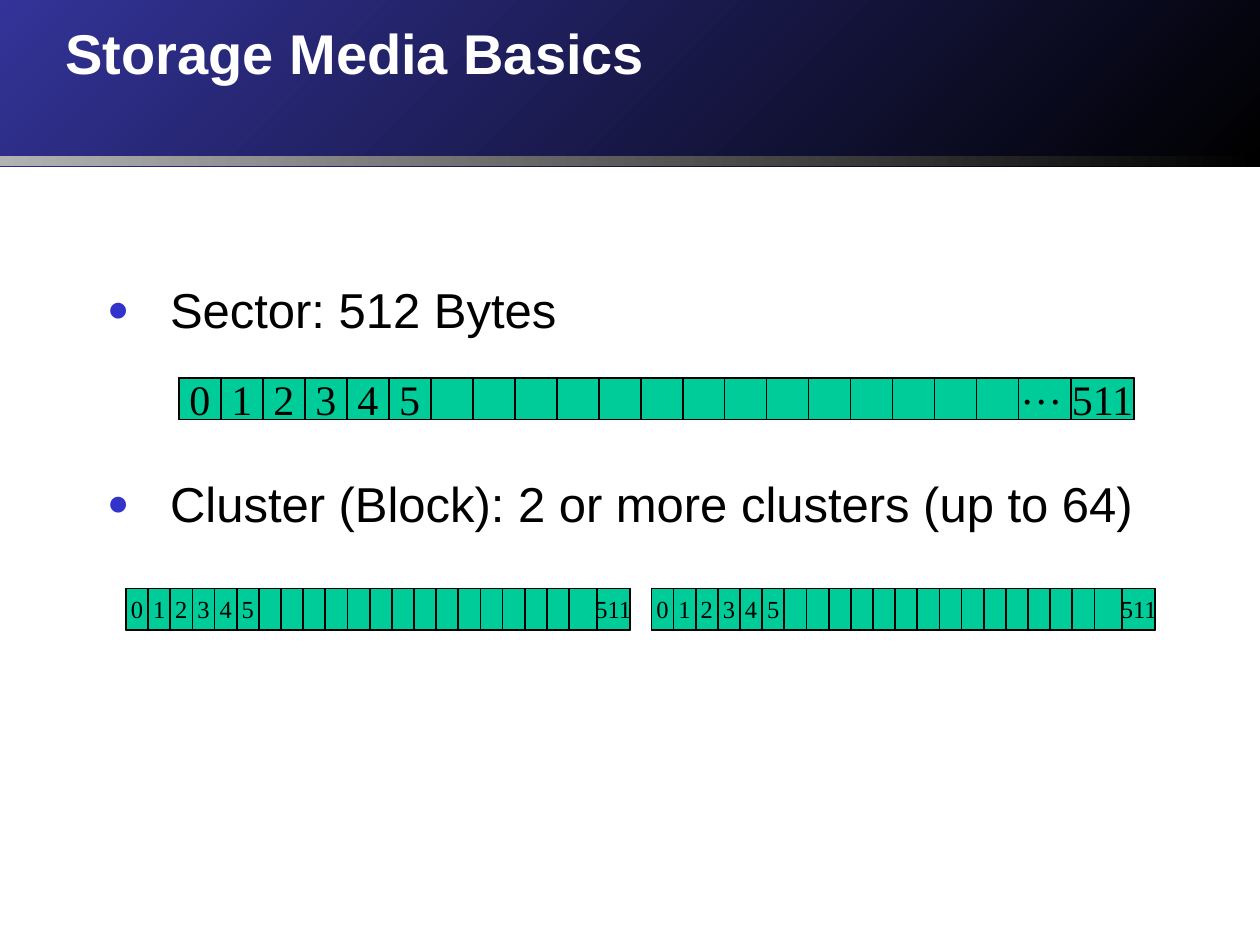
from lxml.etree import SubElement
from pptx import Presentation
from pptx.dml.color import RGBColor
from pptx.enum.shapes import MSO_SHAPE
from pptx.enum.text import MSO_ANCHOR, MSO_AUTO_SIZE, PP_ALIGN
from pptx.oxml import parse_xml
from pptx.oxml.ns import nsdecls, qn
from pptx.util import Inches, Pt

BLACK = "000000"
GREEN = "00CC99"


def color(value):
    return RGBColor.from_string(value)


def place(shape, x, y, w, h):
    shape.left, shape.top = Inches(x), Inches(y)
    shape.width, shape.height = Inches(w), Inches(h)


def format_run(r, size, font, fill, bold=False):
    r.font.size, r.font.name, r.font.bold = Pt(size), font, bold
    r.font.color.rgb = color(fill)


def add_rect(shapes, x, y, w, h):
    sp = shapes.add_shape(MSO_SHAPE.RECTANGLE, Inches(x), Inches(y), Inches(w), Inches(h))
    sp.shadow.inherit = False
    return sp


def add_banner(s, x, y, w, h):
    strip = 0.08
    bands = [(y, h, "333399", 315), (y + h - strip, strip, "B2B2B2", 0)]
    back = s.shapes.title.element
    for top, height, start, angle in bands:
        sp = add_rect(s.shapes, x, top, w, height)
        sp.fill.gradient()
        sp.fill.gradient_angle = angle
        for stop, value in zip(sp.fill.gradient_stops, (start, BLACK)):
            stop.color.rgb = color(value)
        sp.line.fill.background()
        back.addprevious(sp.element)  # keep the bands behind the title


def set_title(s, text, x, y, w, h):
    title = s.shapes.title
    place(title, x, y, w, h)
    tf = title.text_frame
    tf.text = text
    tf.auto_size = MSO_AUTO_SIZE.NONE
    tf.vertical_anchor = MSO_ANCHOR.TOP
    p = tf.paragraphs[0]
    p.alignment = PP_ALIGN.LEFT
    p.space_before = Pt(3)
    r = p.runs[0]
    format_run(r, 32, "Arial", "FFFFFF", bold=True)
    # Text shadow
    r.font.fill  # solid fill comes before the effect list
    r.font._element.find(qn("a:solidFill")).addnext(parse_xml(
        f'<a:effectLst {nsdecls("a")}><a:outerShdw dist="35921" dir="2700000">'
        f'<a:srgbClr val="{BLACK}"/></a:outerShdw></a:effectLst>'))


def add_bullet(p):
    pPr = p._p.get_or_add_pPr()
    pPr.set("marL", str(Inches(0.5)))
    pPr.set("indent", str(-Inches(0.5)))
    SubElement(SubElement(pPr, qn("a:buClr")), qn("a:srgbClr"), val="3333CC")
    SubElement(pPr, qn("a:buSzPct"), val="75000")
    SubElement(pPr, qn("a:buFont"), typeface="Arial")
    SubElement(pPr, qn("a:buChar"), char="●")


def set_body(s, items, x, y, w, h):
    body = s.placeholders[1]
    place(body, x, y, w, h)
    tf = body.text_frame
    tf.auto_size = MSO_AUTO_SIZE.NONE
    tf.text = "\n".join(text for text, _ in items)
    for p, (_, gap) in zip(tf.paragraphs, items):
        p.space_before = Pt(gap)
        add_bullet(p)
        format_run(p.runs[0], 28, "Arial", BLACK)


def add_cell(shapes, text, size, x, y, w, h):
    sp = add_rect(shapes, x, y, w, h)
    sp.fill.solid()
    sp.fill.fore_color.rgb = color(GREEN)
    sp.line.color.rgb = color(BLACK)
    sp.line.width = Pt(1)
    if text:
        tf = sp.text_frame
        tf.text = text
        tf.word_wrap = False
        tf.vertical_anchor = MSO_ANCHOR.MIDDLE
        tf.paragraphs[0].alignment = PP_ALIGN.CENTER
        format_run(tf.paragraphs[0].runs[0], size, "Times New Roman", BLACK)


def add_sector(s, size, x, y, w, h):
    """Byte strip: three runs of six cells, a unit apart, then a wide last cell."""
    shapes = s.shapes.add_group_shape().shapes
    unit = w / 22.75
    add_cell(shapes, "", size, x, y, w, h)
    for i in range(20):
        if i % 7 != 6:
            add_cell(shapes, str(i) if i < 6 else "", size, x + i * unit, y, unit, h)
    add_cell(shapes, "511", size, x + w - 1.5 * unit, y, 1.5 * unit, h)


def add_ellipsis(s, x, y, w, h):
    tf = s.shapes.add_textbox(Inches(x), Inches(y), Inches(w), Inches(h)).text_frame
    tf.text = "…"
    tf.word_wrap = True
    format_run(tf.paragraphs[0].runs[0], 24, "Times New Roman", BLACK)


def main():
    prs = Presentation()
    prs.slide_width, prs.slide_height = Inches(10), Inches(7.5)
    s = prs.slides.add_slide(prs.slide_layouts[1])

    # Heading and list
    add_banner(s, 0, 0, 10, 1.32)
    set_title(s, "Storage Media Basics", 0.42, 0.1, 9.08, 1)
    set_body(s, [("Sector: 512 Bytes", 3),
                 ("Cluster (Block): 2 or more clusters (up to 64)", 77)],
             0.75, 2.17, 8.83, 4.5)

    # One sector, then a cluster of two
    add_sector(s, 24, 1.42, 3, 7.58, 0.33)
    add_ellipsis(s, 8, 2.83, 0.53, 0.5)
    for x in (1, 5.17):
        add_sector(s, 14, x, 4.67, 4, 0.33)

    prs.save("out.pptx")


if __name__ == "__main__":
    main()
